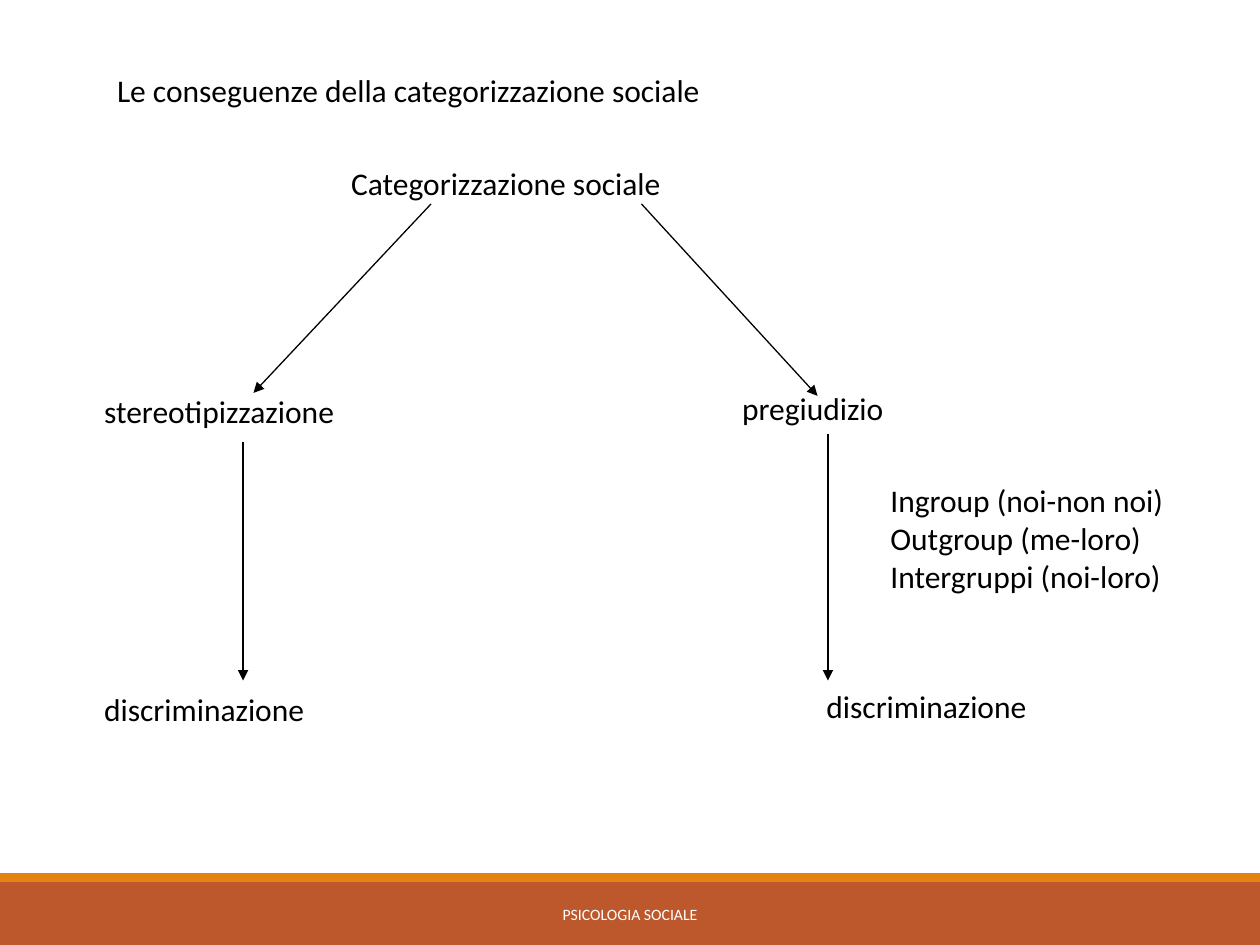
from lxml import etree
from pptx import Presentation
from pptx.dml.color import RGBColor
from pptx.enum.shapes import MSO_CONNECTOR, MSO_SHAPE
from pptx.enum.text import MSO_ANCHOR, MSO_AUTO_SIZE, PP_ALIGN
from pptx.oxml.ns import qn
from pptx.util import Cm, Pt

RECT = MSO_SHAPE.RECTANGLE
STRAIGHT = MSO_CONNECTOR.STRAIGHT
GROW = MSO_AUTO_SIZE.SHAPE_TO_FIT_TEXT
MIDDLE = MSO_ANCHOR.MIDDLE
CENTER = PP_ALIGN.CENTER

FONT = "Calibri"
COLORS = {"text": "000000", "footer": "FFFFFF", "band": "BD582C", "stripe": "E48312"}
WIDTH, HEIGHT = 25.4, 19.05
LINE_H = 1.02


def color(name):
    return RGBColor.from_string(COLORS[name])


def add_bar(s, y, h, fill):
    sp = s.shapes.add_shape(RECT, 0, Cm(y), Cm(WIDTH), Cm(h))
    sp.shadow.inherit = False
    sp.fill.solid()
    sp.fill.fore_color.rgb = color(fill)
    sp.line.fill.background()


def add_text(s, x, y, w, lines, h=LINE_H, size=18, ink="text"):
    tf = s.shapes.add_textbox(Cm(x), Cm(y), Cm(w), Cm(h)).text_frame
    tf.word_wrap = False
    tf.auto_size = GROW
    for i, line in enumerate(lines):
        p = tf.add_paragraph() if i else tf.paragraphs[0]
        r = p.add_run()
        r.text = line
        r.font.name = FONT
        r.font.size = Pt(size)
        r.font.color.rgb = color(ink)
    return tf


def add_footer(s, text):
    tf = add_text(s, 7.67, 17.93, 10.06, [text], size=9, ink="footer")
    tf.auto_size = MSO_AUTO_SIZE.NONE
    tf.word_wrap = True
    tf.vertical_anchor = MIDDLE
    tf.paragraphs[0].alignment = CENTER


def add_arrow(s, x1, y1, x2, y2):
    cn = s.shapes.add_connector(STRAIGHT, Cm(x1), Cm(y1), Cm(x2), Cm(y2))
    cn.line.color.rgb = color("text")
    cn.line.width = Pt(0.75)
    etree.SubElement(cn.line._get_or_add_ln(), qn("a:tailEnd"), type="triangle")
    etree.SubElement(cn._element.spPr, qn("a:effectLst"))


def main():
    prs = Presentation()
    prs.slide_width, prs.slide_height = Cm(WIDTH), Cm(HEIGHT)
    s = prs.slides.add_slide(prs.slide_layouts[6])

    # Bottom bands
    add_bar(s, 17.78, 1.27, "band")
    add_bar(s, 17.6, 0.18, "stripe")

    # Title and concepts
    add_text(s, 2.11, 1.3, 13.77, ["Le conseguenze della categorizzazione sociale"])
    for x, y, w, label in [
        (6.83, 3.18, 7.57, "Categorizzazione sociale"),
        (1.85, 7.77, 5.59, "stereotipizzazione"),
        (1.85, 13.79, 4.88, "discriminazione"),
        (14.71, 7.72, 3.58, "pregiudizio"),
        (16.41, 13.72, 4.88, "discriminazione"),
    ]:
        add_text(s, x, y, w, [label])

    # Group relations
    add_text(s, 17.7, 9.58, 6.4, [
        "Ingroup (noi-non noi)",
        "Outgroup (me-loro)",
        "Intergruppi (noi-loro)",
    ], h=2.54)

    # Arrows from cause to consequence
    for ends in [
        (8.69, 4.11, 5.11, 7.92),
        (12.93, 4.11, 16.48, 7.98),
        (4.9, 8.92, 4.9, 13.72),
        (16.69, 8.74, 16.69, 13.72),
    ]:
        add_arrow(s, *ends)

    add_footer(s, "PSICOLOGIA SOCIALE")
    prs.save("out.pptx")


if __name__ == "__main__":
    main()
